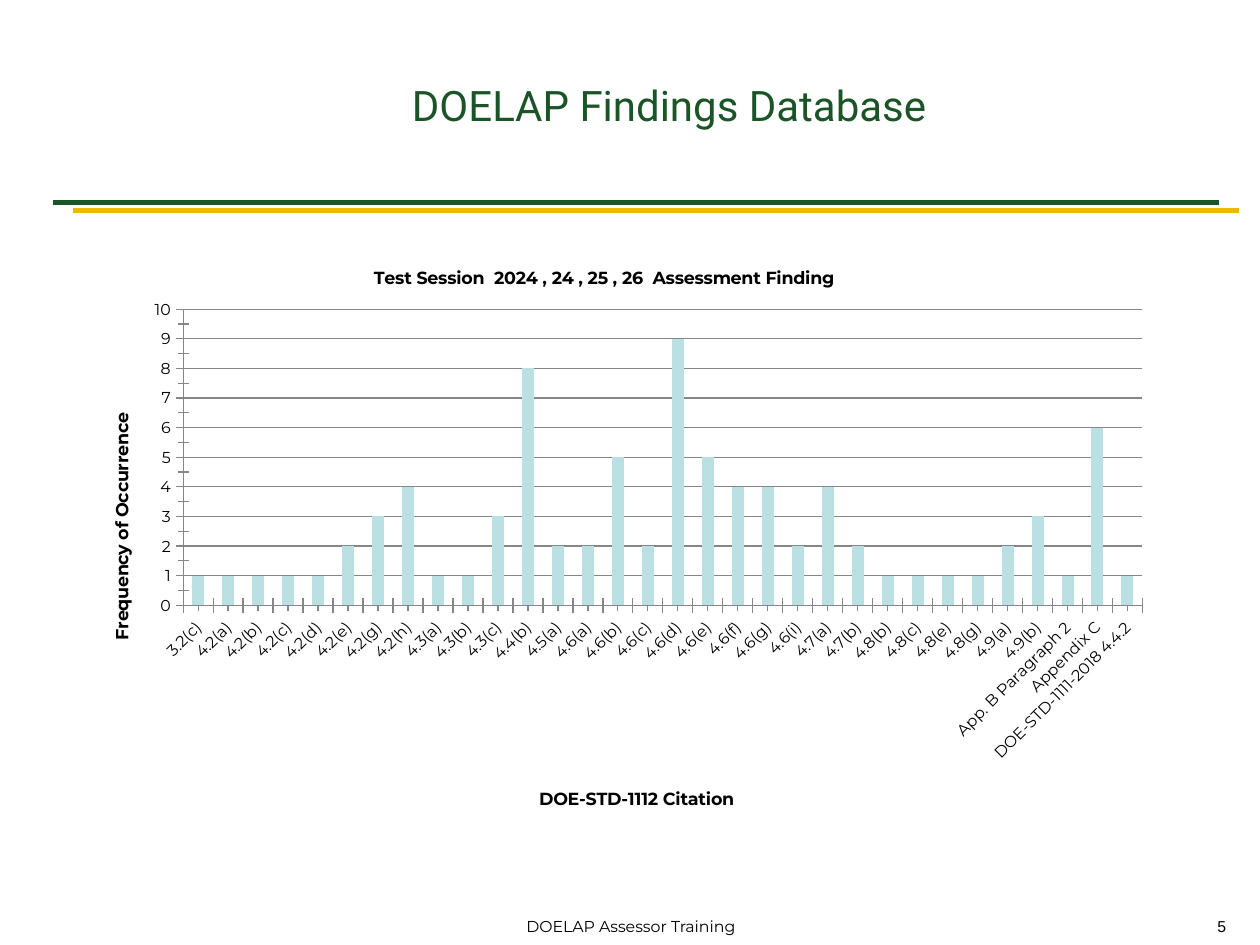
import pptx
import pptx.chart.data
import pptx.dml.color
import pptx.enum.chart
import pptx.enum.shapes
import pptx.enum.text
import pptx.oxml
import pptx.oxml.ns
import pptx.oxml.xmlchemy
import pptx.util
from dataclasses import dataclass

Cm = pptx.util.Cm
Pt = pptx.util.Pt
qn = pptx.oxml.ns.qn
new_element = pptx.oxml.xmlchemy.OxmlElement
rgb = pptx.dml.color.RGBColor.from_string
align = pptx.enum.text.PP_ALIGN


@dataclass(frozen=True)
class Theme:
    green: str = "1B5527"
    gold: str = "E8BB00"
    bar: str = "BBE0E3"
    grid: str = "868686"
    text: str = "000000"
    title_size: int = 24
    chart_size: int = 10
    small_size: int = 9
    title_font: str = "Roboto"
    body_font: str = "Montserrat"
    number_font: str = "Arial"


theme = Theme()


def style(font, size, name, color, bold=False):
    font.size, font.name, font.bold = Pt(size), name, bold
    font.color.rgb = rgb(color)


def place(element, index, **fractions):
    """Give a chart part a manual layout, in fractions of the chart."""
    for old in element.findall(qn("c:layout")):
        element.remove(old)
    layout = new_element("c:layout")
    manual = new_element("c:manualLayout")
    layout.append(manual)
    settings = {"xMode": "edge", "yMode": "edge", **fractions}
    if "w" in fractions:
        settings = {"layoutTarget": "inner", **settings}
    for tag, value in settings.items():
        setting = new_element(f"c:{tag}")
        setting.set("val", str(value))
        manual.append(setting)
    element.insert(index, layout)


deck = pptx.Presentation()
deck.slide_width, deck.slide_height = Cm(25.4), Cm(19.05)
page = deck.slides.add_slide(deck.slide_layouts[5])

# Title
title = page.shapes.title
title.left, title.top, title.width, title.height = Cm(8.05), Cm(0.43), Cm(16.08), Cm(3.38)
title.text_frame.text = "DOELAP Findings Database"
title.text_frame.vertical_anchor = pptx.enum.text.MSO_ANCHOR.MIDDLE
title.text_frame.paragraphs[0].alignment = align.LEFT
style(title.text_frame.paragraphs[0].font, theme.title_size, theme.title_font, theme.green)

# Double rule under the title
for left, top, color in ((1.07, 4.08, theme.green), (1.48, 4.24, theme.gold)):
    rule = page.shapes.add_connector(
        pptx.enum.shapes.MSO_CONNECTOR.STRAIGHT, Cm(left), Cm(top), Cm(left + 23.5), Cm(top))
    rule.line.color.rgb = rgb(color)
    rule.line.width = Pt(3)
    rule._element.spPr.append(new_element("a:effectLst"))

# Footer and page number
for text, left, width, side, font in (
        ("DOELAP Assessor Training", 8.69, 8.05, align.CENTER, theme.body_font),
        ("5", 19.89, 5.08, align.RIGHT, theme.number_font)):
    box = page.shapes.add_textbox(Cm(left), Cm(18.36), Cm(width), Cm(0.66))
    box.text_frame.word_wrap = True
    box.text_frame.text = text
    paragraph = box.text_frame.paragraphs[0]
    paragraph.alignment = side
    style(paragraph.font, theme.small_size, font, theme.text)

# Findings by citation
findings = {
    "3.2(c)": 1, "4.2(a)": 1, "4.2(b)": 1, "4.2(c)": 1, "4.2(d)": 1, "4.2(e)": 2,
    "4.2(g)": 3, "4.2(h)": 4, "4.3(a)": 1, "4.3(b)": 1, "4.3(c)": 3, "4.4(b)": 8,
    "4.5(a)": 2, "4.6(a)": 2, "4.6(b)": 5, "4.6(c)": 2, "4.6(d)": 9, "4.6(e)": 5,
    "4.6(f)": 4, "4.6(g)": 4, "4.6(i)": 2, "4.7(a)": 4, "4.7(b)": 2, "4.8(b)": 1,
    "4.8(c)": 1, "4.8(e)": 1, "4.8(g)": 1, "4.9(a)": 2, "4.9(b)": 3,
    "App. B Paragraph 2": 1, "Appendix C": 6, "DOE-STD-1111-2018 4.4.2": 1,
}
data = pptx.chart.data.CategoryChartData()
data.categories = list(findings)
data.add_series("Series 1", list(findings.values()))
chart = page.shapes.add_chart(
    pptx.enum.chart.XL_CHART_TYPE.COLUMN_CLUSTERED,
    Cm(1.47), Cm(4.8), Cm(22.23), Cm(11.94), data).chart
style(chart.font, theme.chart_size, theme.body_font, theme.text)
chart.has_legend = False
place(chart._chartSpace.chart.plotArea, 0, x=0.1, y=0.12, w=0.87, h=0.5)

# Columns
plot = chart.plots[0]
plot.gap_width = 150
plot.vary_by_categories = False
fill = plot.series[0].format.fill
fill.solid()
fill.fore_color.rgb = rgb(theme.bar)

# Axes
cross = pptx.enum.chart.XL_TICK_MARK.CROSS
for axis in (chart.category_axis, chart.value_axis):
    axis.major_tick_mark = axis.minor_tick_mark = cross
    axis.format.line.color.rgb = rgb(theme.grid)
    axis.format.line.width = Pt(0.75)
    style(axis.tick_labels.font, theme.small_size, theme.body_font, theme.text)
chart.category_axis._element.find(qn("c:txPr")).find(qn("a:bodyPr")).set("rot", "-2700000")
values = chart.value_axis
values.minimum_scale, values.maximum_scale = 0, 10
values.major_unit, values.minor_unit = 1, 0.5
values.has_major_gridlines = True
values.major_gridlines.format.line.color.rgb = rgb(theme.grid)
values.major_gridlines.format.line.width = Pt(0.75)

# Chart and axis titles
for heading, text, x, y, turn in (
        (chart.chart_title, "Test Session  2024 , 24 , 25 , 26  Assessment Finding", 0.27, 0.04, 0),
        (chart.category_axis.axis_title, "DOE-STD-1112 Citation", 0.42, 0.92, 0),
        (values.axis_title, "Frequency of Occurrence", 0.03, 0.29, -90)):
    heading.text_frame.text = text
    style(heading.text_frame.paragraphs[0].font,
          theme.chart_size, theme.body_font, theme.text, bold=True)
    body = heading.text_frame._txBody.find(qn("a:bodyPr"))
    body.set("rot", str(turn * 60000))
    body.set("vert", "horz")
    place(heading._element, 1, x=x, y=y)

deck.save("out.pptx")
